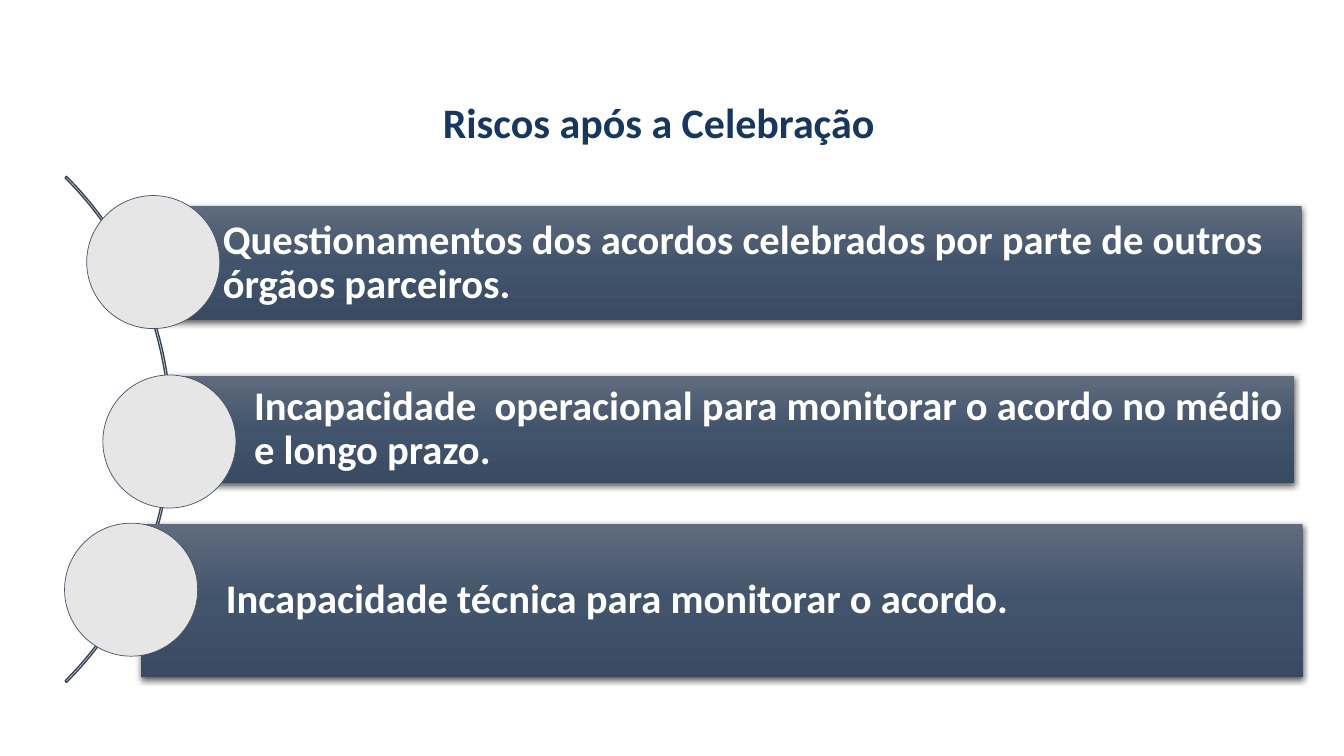
from lxml.etree import SubElement
from pptx import Presentation
from pptx.dml.color import RGBColor as RGB
from pptx.enum.shapes import MSO_SHAPE as SHAPE
from pptx.enum.text import MSO_ANCHOR as ANCHOR, PP_ALIGN as ALIGN
from pptx.oxml.ns import qn
from pptx.util import Inches, Pt

COLORS = {
    "title": "17375E", "text": "FFFFFF", "arc": "364355",
    "disc": "E7E6E6", "rim": "44546A", "shade": "000000",
    "top": "606B7D", "mid": "42546C", "base": "394A62",
}
FONT = "Calibri"
DISC = 1.32

# Bar box, disc corner, wording
RISKS = [
    ((1.37, 2.04, 11.54, 1.14), (0.86, 1.94),
     "Questionamentos dos acordos celebrados por parte de outros órgãos parceiros."),
    ((1.68, 3.73, 11.16, 1.06), (1.02, 3.72),
     "Incapacidade  operacional para monitorar o acordo no médio e longo prazo."),
    ((1.4, 5.2, 11.52, 1.52), (0.64, 5.19),
     "Incapacidade técnica para monitorar o acordo."),
]


def color(name):
    return RGB.from_string(COLORS[name])


def add_shape(slide, kind, box):
    shape = slide.shapes.add_shape(kind, *map(Inches, box))
    shape.shadow.inherit = False
    return shape


def set_line(shape, name, width):
    shape.line.color.rgb = color(name)
    shape.line.width = Pt(width)


def write(frame, text, size, name, align):
    frame.word_wrap = True
    para = frame.paragraphs[0]
    para.alignment = align
    para.line_spacing = 0.9
    run = para.add_run()
    run.text = text
    run.font.name = FONT
    run.font.size = Pt(size)
    run.font.bold = True
    run.font.color.rgb = color(name)


def add_color(parent, name):
    return SubElement(parent, qn("a:srgbClr"), val=COLORS[name])


def set_blend(shape):
    shape.fill.gradient()
    shape.fill.gradient_angle = 270
    stops = shape._element.spPr.find(".//" + qn("a:gsLst"))
    for stop in list(stops):
        stops.remove(stop)
    for place, name in ((0, "top"), (50, "mid"), (100, "base")):
        add_color(SubElement(stops, qn("a:gs"), pos=str(place * 1000)), name)


def set_shadow(shape):
    effects = shape._element.spPr.find(qn("a:effectLst"))
    outer = SubElement(effects, qn("a:outerShdw"), blurRad=str(Pt(4.5)),
                       dist=str(Pt(1.5)), dir="5400000", algn="ctr", rotWithShape="0")
    SubElement(add_color(outer, "shade"), qn("a:alpha"), val="63000")


def add_title(slide, text):
    box = slide.shapes.add_textbox(*map(Inches, (1.95, 0.97, 9.17, 0.94)))
    write(box.text_frame, text, 30, "title", ALIGN.CENTER)


def add_arc(slide):
    arc = add_shape(slide, SHAPE.BLOCK_ARC, (-5.4, 0.71, 7.1, 7.1))
    for i, value in enumerate((189, 27, 0.003)):
        arc.adjustments[i] = value
    arc.fill.background()
    set_line(arc, "arc", 1)


def add_bar(slide, box, text):
    bar = add_shape(slide, SHAPE.RECTANGLE, box)
    set_blend(bar)
    bar.line.fill.background()
    set_shadow(bar)
    frame = bar.text_frame
    frame.vertical_anchor = ANCHOR.MIDDLE
    frame.margin_left = Inches(0.84)
    frame.margin_top = frame.margin_right = frame.margin_bottom = Inches(0.08)
    write(frame, text, 29, "text", ALIGN.LEFT)


def add_disc(slide, corner):
    disc = add_shape(slide, SHAPE.OVAL, (*corner, DISC, DISC))
    disc.fill.solid()
    disc.fill.fore_color.rgb = color("disc")
    set_line(disc, "rim", 0.5)


def main():
    deck = Presentation()
    deck.slide_width, deck.slide_height = Inches(13.33), Inches(7.5)
    slide = deck.slides.add_slide(deck.slide_layouts[6])

    # Heading and curve
    add_title(slide, "Riscos após a Celebração")
    add_arc(slide)

    # Risk bars with their discs
    for box, corner, text in RISKS:
        add_bar(slide, box, text)
        add_disc(slide, corner)

    deck.save("out.pptx")


if __name__ == "__main__":
    main()
